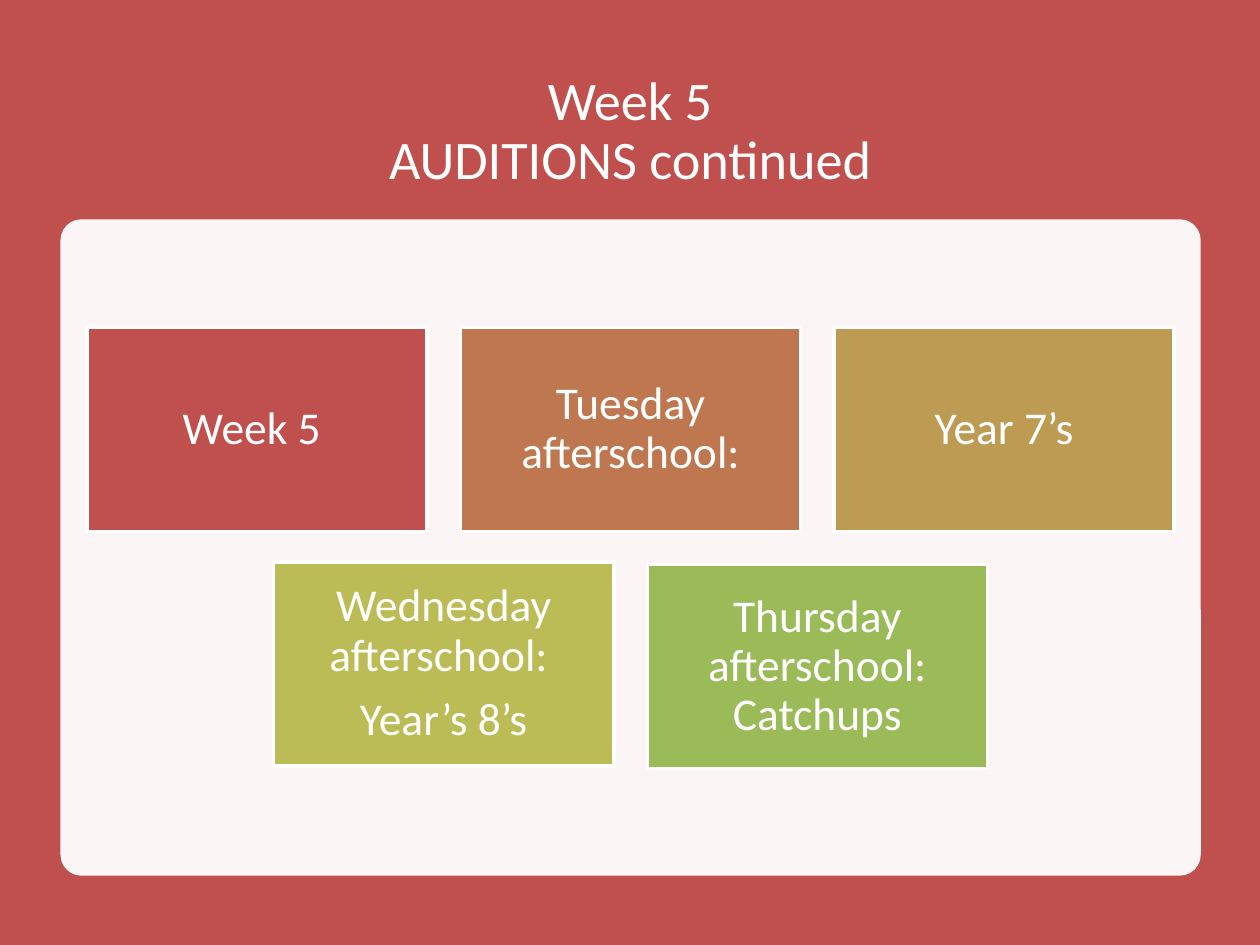
from pptx import Presentation
from pptx.dml.color import RGBColor
from pptx.enum.shapes import MSO_SHAPE as Shape
from pptx.enum.text import MSO_ANCHOR as Anchor, MSO_AUTO_SIZE as AutoSize, PP_ALIGN as Align
from pptx.oxml.ns import qn
from pptx.util import Inches, Pt
from lxml.etree import SubElement

COLORS = {
    "red": "C0504D", "orange": "BF7750", "gold": "BD9B53",
    "olive": "BCBC56", "green": "9BBB59", "white": "FFFFFF",
}
TITLE_ONLY = 5


class SlideBuilder:
    font = "Calibri"
    grid_left, grid_top = 0.69, 2.6
    column_pitch, row_pitch = 2.965, 1.88
    card_width, card_height = 2.7, 1.62

    def __init__(self, deck):
        self.slide = deck.slides.add_slide(deck.slide_layouts[TITLE_ONLY])
        self.width, self.height = deck.slide_width, deck.slide_height

    def color(self, name):
        return RGBColor.from_string(COLORS[name])

    def set_text(self, frame, text, size, space_after=0):
        frame.text = text
        frame.word_wrap = True
        frame.auto_size = AutoSize.NONE
        frame.vertical_anchor = Anchor.MIDDLE
        for paragraph in frame.paragraphs:
            paragraph.alignment = Align.CENTER
            paragraph.line_spacing = 0.9
            paragraph.space_after = Pt(space_after)
            for run in paragraph.runs:
                run.font.name = self.font
                run.font.size = Pt(size)
                run.font.color.rgb = self.color("white")

    def block(self, kind, box, fill):
        block = self.slide.shapes.add_shape(kind, *box)
        block.shadow.inherit = False
        block.fill.solid()
        block.fill.fore_color.rgb = self.color(fill)
        block.line.fill.background()
        return block

    def backdrop(self, fill):
        backdrop = self.block(Shape.RECTANGLE, (0, 0, self.width, self.height), fill)
        # Send behind the title placeholder
        self.slide.shapes.title._element.addprevious(backdrop._element)

    def title(self, text):
        title = self.slide.shapes.title
        title.left, title.top = Inches(0.69), Inches(0.5)
        title.width, title.height = Inches(8.62), Inches(1.1)
        self.set_text(title.text_frame, text, 31)

    def panel(self, fill, opacity):
        box = [Inches(length) for length in (0.48, 1.74, 9.05, 5.21)]
        panel = self.block(Shape.ROUNDED_RECTANGLE, box, fill)
        panel.adjustments[0] = 0.032
        tint = panel._element.spPr.find(qn("a:solidFill"))[0]
        SubElement(tint, qn("a:alpha"), val=str(opacity * 1000))

    def card(self, column, row, text, fill):
        box = [Inches(length) for length in (
            self.grid_left + column * self.column_pitch,
            self.grid_top + row * self.row_pitch,
            self.card_width, self.card_height)]
        card = self.block(Shape.RECTANGLE, box, fill)
        card.line.color.rgb = self.color("white")
        card.line.width = Pt(2)
        frame = card.text_frame
        frame.margin_left = frame.margin_right = Inches(0.11)
        frame.margin_top = frame.margin_bottom = Inches(0.11)
        self.set_text(frame, text, 26, space_after=9)


def main():
    deck = Presentation()
    deck.slide_width, deck.slide_height = Inches(10), Inches(7.5)
    week = SlideBuilder(deck)

    # Background, heading and panel
    week.backdrop("red")
    week.title("Week 5\vAUDITIONS continued")
    week.panel("white", opacity=95)

    # Schedule cards: three above, two centred below
    schedule = [
        (0, 0, "Week 5 ", "red"),
        (1, 0, "Tuesday afterschool:", "orange"),
        (2, 0, "Year 7’s", "gold"),
        (0.5, 0.99, "Wednesday afterschool: \nYear’s 8’s", "olive"),
        (1.5, 1, "Thursday afterschool: Catchups", "green"),
    ]
    for column, row, text, fill in schedule:
        week.card(column, row, text, fill)

    deck.save("out.pptx")


if __name__ == "__main__":
    main()
